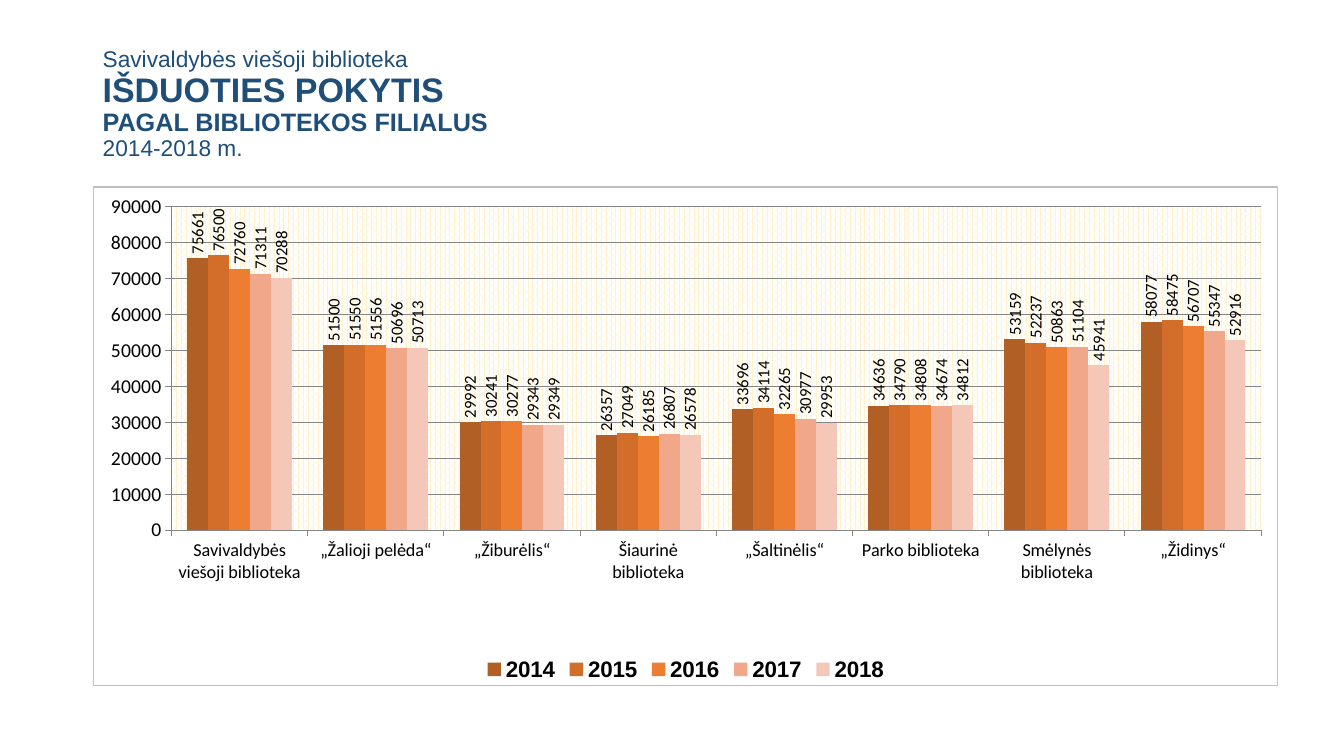
"""Build a slide comparing library loans by branch, 2014-2018."""
from dataclasses import dataclass

from pptx import Presentation
from pptx.chart.data import CategoryChartData
from pptx.dml.color import RGBColor
from pptx.enum.chart import XL_CHART_TYPE, XL_LABEL_POSITION, XL_LEGEND_POSITION, XL_TICK_MARK
from pptx.enum.text import MSO_ANCHOR
from pptx.oxml import parse_xml
from pptx.oxml.ns import nsdecls
from pptx.util import Inches, Pt

CLUSTERED = XL_CHART_TYPE.COLUMN_CLUSTERED
OUTSIDE_END = XL_LABEL_POSITION.OUTSIDE_END
BOTTOM = XL_LEGEND_POSITION.BOTTOM
TICK_OUT = XL_TICK_MARK.OUTSIDE
MIDDLE = MSO_ANCHOR.MIDDLE

BRANCHES = ["Savivaldybės viešoji biblioteka", "„Žalioji pelėda“", "„Žiburėlis“",
            "Šiaurinė biblioteka", "„Šaltinėlis“", "Parko biblioteka",
            "Smėlynės biblioteka", "„Židinys“"]
LOANS = {
    "2014": [75661, 51500, 29992, 26357, 33696, 34636, 53159, 58077],
    "2015": [76500, 51550, 30241, 27049, 34114, 34790, 52237, 58475],
    "2016": [72760, 51556, 30277, 26185, 32265, 34808, 50863, 56707],
    "2017": [71311, 50696, 29343, 26807, 30977, 34674, 51104, 55347],
    "2018": [70288, 50713, 29349, 26578, 29953, 34812, 45941, 52916],
}


@dataclass(frozen=True)
class Theme:
    """Colours, fonts and type sizes of the slide."""
    heading: str = "1F4E79"
    text: str = "000000"
    grid: str = "868686"
    border: str = "BFBFBF"
    pattern: str = "FFF2CC"
    paper: str = "FFFFFF"
    years: tuple = ("B25F26", "D26E2A", "ED7D31", "F1A78A", "F5C7B8")
    heading_font: str = "Arial"
    chart_font: str = "Calibri"
    small: float = 16.2
    medium: float = 18
    large: float = 24.3
    label: float = 12
    category: float = 13
    value: float = 14
    legend: float = 16


def style_font(font, size, color, name, bold=False):
    """Apply size, colour, typeface and weight to a font."""
    font.size, font.name, font.bold = Pt(size), name, bold
    font.color.rgb = RGBColor.from_string(color)


def write_lines(para, lines, color, name, spacing):
    """Write (text, size, bold) lines into one paragraph."""
    para.line_spacing = spacing
    for index, (text, size, bold) in enumerate(lines):
        if index:
            para.add_line_break()
        span = para.add_run()
        span.text = text
        style_font(span.font, size, color, name, bold)


class SlideBuilder:
    """Hold the theme and the current slide."""

    def __init__(self, page, theme):
        """Keep the page and its theme."""
        self.page, self.theme = page, theme

    def add_heading(self, left, top, width, height, lines):
        """Add the heading text box."""
        box = self.page.shapes.add_textbox(Inches(left), Inches(top), Inches(width), Inches(height))
        frame = box.text_frame
        frame.word_wrap, frame.vertical_anchor = True, MIDDLE
        write_lines(frame.paragraphs[0], lines, self.theme.heading, self.theme.heading_font, 0.9)

    def add_columns(self, left, top, width, height, categories, values):
        """Add the clustered column chart."""
        theme = self.theme
        data = CategoryChartData()
        data.categories = categories
        for name, numbers in values.items():
            data.add_series(name, numbers)
        chart = self.page.shapes.add_chart(CLUSTERED, Inches(left), Inches(top), Inches(width),
                                           Inches(height), data).chart
        style_font(chart.font, 10, theme.text, theme.chart_font)
        chart.has_title = False
        chart.has_legend = True
        chart.legend.position, chart.legend.include_in_layout = BOTTOM, False
        style_font(chart.legend.font, theme.legend, theme.text, theme.heading_font, True)
        plot = chart.plots[0]
        plot.gap_width, plot.overlap, plot.vary_by_categories = 150, 0, False
        for series, color in zip(plot.series, theme.years):
            self.style_series(series, color)
        self.style_axis(chart.category_axis, theme.category)
        self.style_axis(chart.value_axis, theme.value)
        axis = chart.value_axis
        axis.minimum_scale, axis.maximum_scale, axis.major_unit = 0, 90000, 10000
        axis.has_major_gridlines = True
        self.style_line(axis.major_gridlines.format.line, theme.grid)
        self.frame_chart(chart)

    def style_series(self, series, color):
        """Colour one year's columns and turn its labels upright."""
        series.format.fill.solid()
        series.format.fill.fore_color.rgb = RGBColor.from_string(color)
        series.invert_if_negative = False
        labels = series.data_labels
        labels.show_value, labels.position = True, OUTSIDE_END
        style_font(labels.font, self.theme.label, self.theme.text, self.theme.chart_font)
        for body in series._element.xpath("c:dLbls/c:txPr/a:bodyPr"):
            body.set("rot", "-5400000")
            body.set("vert", "horz")

    def style_axis(self, axis, size):
        """Set the axis ticks, line and text."""
        axis.major_tick_mark = TICK_OUT
        self.style_line(axis.format.line, self.theme.grid)
        style_font(axis.tick_labels.font, size, self.theme.text, self.theme.chart_font)

    def style_line(self, line, color):
        """Set a thin coloured line."""
        line.width = Pt(0.75)
        line.color.rgb = RGBColor.from_string(color)

    def frame_chart(self, chart):
        """Place the plot, pattern its background and outline the chart."""
        theme, names = self.theme, nsdecls("c", "a")
        area = chart.element.xpath("c:chart/c:plotArea")[0]
        for layout in area.xpath("c:layout"):
            area.remove(layout)
        places = "".join(f'<c:{tag} val="{value}"/>' for tag, value in (
            ("layoutTarget", "inner"), ("xMode", "edge"), ("yMode", "edge"),
            ("x", 0.066), ("y", 0.04), ("w", 0.92), ("h", 0.648)))
        area.insert(0, parse_xml(
            f"<c:layout {names}><c:manualLayout>{places}</c:manualLayout></c:layout>"))
        area.append(parse_xml(
            f'<c:spPr {names}><a:pattFill prst="pct70">'
            f'<a:fgClr><a:srgbClr val="{theme.pattern}"/></a:fgClr>'
            f'<a:bgClr><a:srgbClr val="{theme.paper}"/></a:bgClr></a:pattFill></c:spPr>'))
        chart.element.xpath("c:chart")[0].addnext(parse_xml(
            f'<c:spPr {names}><a:solidFill><a:srgbClr val="{theme.paper}"/></a:solidFill>'
            f'<a:ln w="9525"><a:solidFill><a:srgbClr val="{theme.border}"/></a:solidFill>'
            f'</a:ln></c:spPr>'))


def main():
    """Create and save the deck."""
    deck = Presentation()
    deck.slide_width, deck.slide_height = Inches(13.33), Inches(7.5)
    theme = Theme()
    builder = SlideBuilder(deck.slides.add_slide(deck.slide_layouts[6]), theme)
    builder.add_heading(0.92, 0.4, 11.5, 1.28, [
        ("Savivaldybės viešoji biblioteka", theme.small, False),
        ("IŠDUOTIES POKYTIS", theme.large, True),
        ("PAGAL BIBLIOTEKOS FILIALUS", theme.medium, True),
        ("2014-2018 m.", theme.small, False)])
    builder.add_columns(0.92, 1.85, 11.76, 4.96, BRANCHES, LOANS)
    deck.save("out.pptx")


if __name__ == "__main__":
    main()
